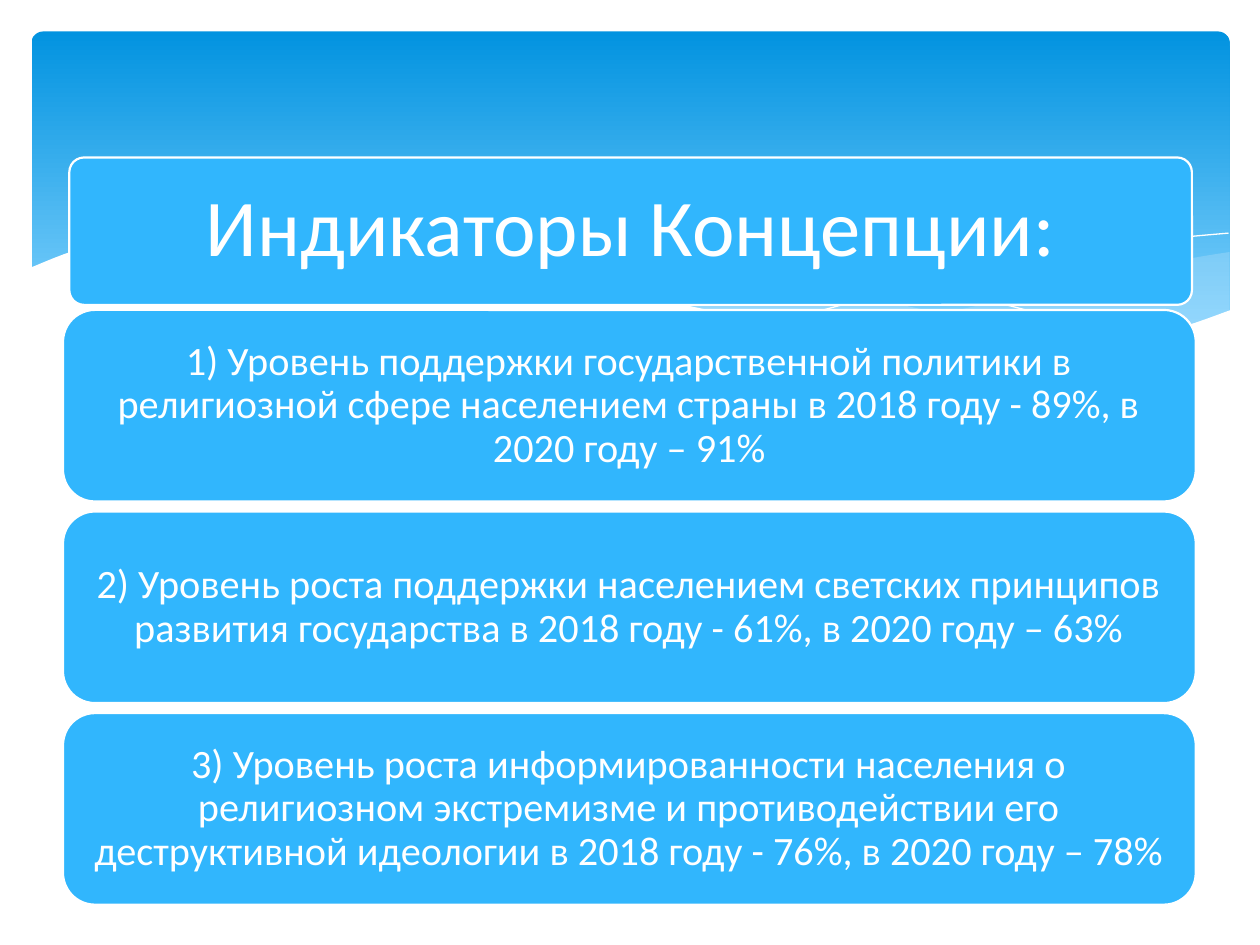
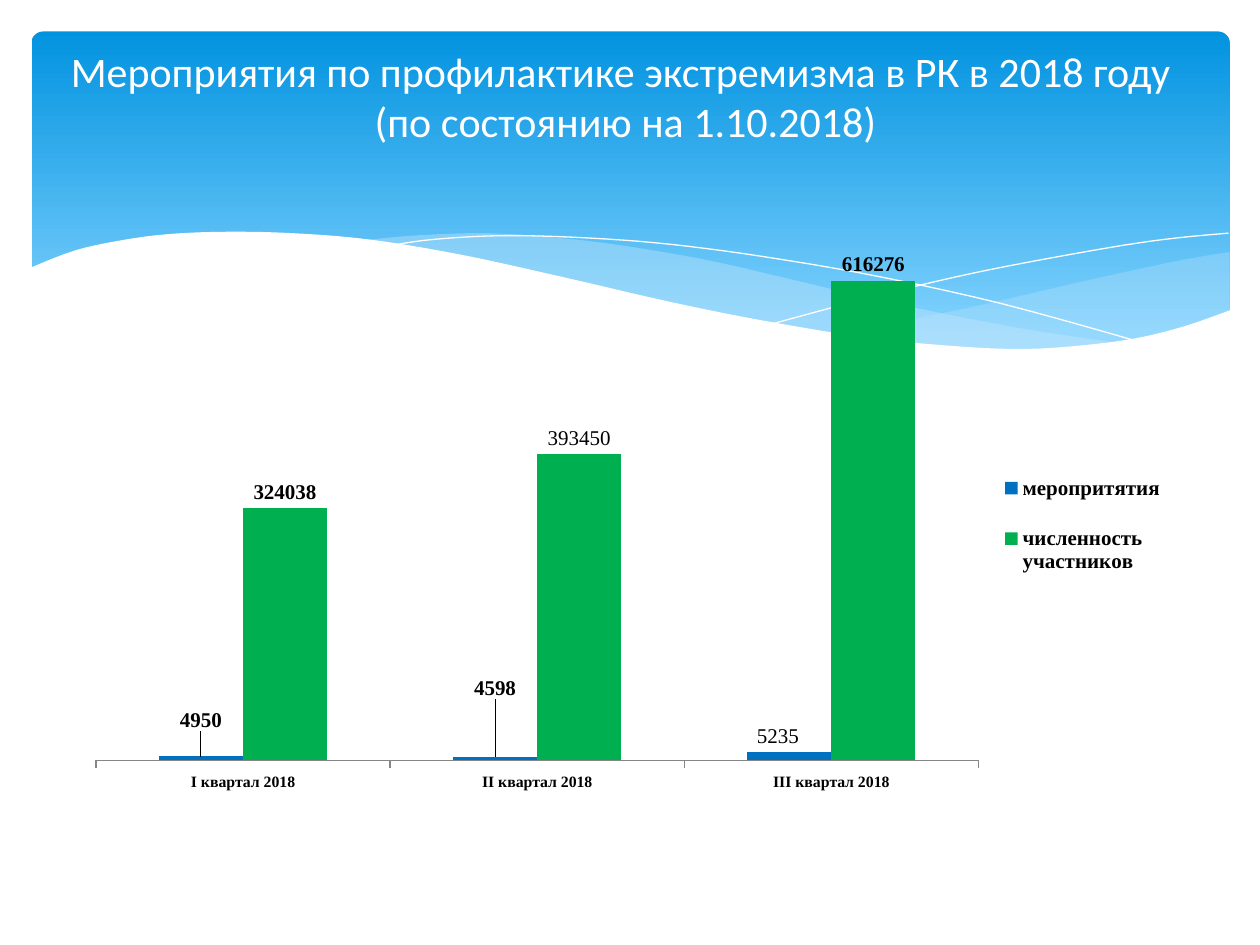
from lxml import etree
from pptx import Presentation
from pptx.chart.data import CategoryChartData
from pptx.dml.color import RGBColor
from pptx.enum.chart import XL_CHART_TYPE as ChartType, XL_LABEL_POSITION as LabelPosition
from pptx.enum.chart import XL_LEGEND_POSITION as LegendPosition, XL_TICK_MARK as TickMark
from pptx.enum.shapes import MSO_SHAPE as Shape
from pptx.enum.text import MSO_ANCHOR as Anchor, MSO_AUTO_SIZE as AutoSize, PP_ALIGN as Align
from pptx.oxml.ns import qn
from pptx.util import Inches, Pt

WHITE = RGBColor(0xFF, 0xFF, 0xFF)
BLACK = RGBColor(0, 0, 0)
GREY = RGBColor(0x86, 0x86, 0x86)
SKY_TOP = RGBColor(0x02, 0x93, 0xE0)
SKY_BOTTOM = RGBColor(0x83, 0xD3, 0xFE)
WAVE = RGBColor(0xC6, 0xE7, 0xFC)
PANEL = RGBColor(0x31, 0xB6, 0xFD)
BLUE = RGBColor(0x00, 0x70, 0xC0)
GREEN = RGBColor(0x00, 0xB0, 0x50)

BODY_FONT = "Calibri"
CHART_FONT = "Times New Roman"

# Each curve is a list of knots; an outline is a list of curves.
RIGHT_WAVE = [
    [(9.76, 2), (9.35, 2.07), (8.61, 2.23), (7.79, 2.42), (7.06, 2.57), (6.61, 2.65)],
    [(6.61, 2.65), (7.19, 2.72), (7.69, 2.77), (8.14, 2.78), (8.63, 2.75), (9.05, 2.69),
     (9.42, 2.59), (9.76, 2.47)],
]
MIDDLE_WAVE = [
    [(8.93, 2.73), (8.07, 2.6), (7.06, 2.4), (6.29, 2.22), (5.69, 2.08), (5.14, 1.98),
     (4.65, 1.91), (4.2, 1.87), (3.8, 1.85), (3.28, 1.87), (2.86, 1.91)],
    [(2.86, 1.91), (3.42, 1.99), (4.04, 2.11), (4.91, 2.32), (5.66, 2.48), (6.34, 2.61),
     (6.95, 2.7), (7.48, 2.76), (8.07, 2.78), (8.57, 2.77), (8.93, 2.73)],
]
FALLING_LINE = [[(3.09, 1.95), (3.44, 1.9), (4.01, 1.87), (4.69, 1.89), (5.33, 1.94),
                 (6.08, 2.04), (6.95, 2.19), (7.95, 2.41), (9.07, 2.72)]]
RISING_LINE = [[(6.13, 2.57), (6.95, 2.35), (7.76, 2.16), (8.66, 1.99), (9.24, 1.9),
                (9.75, 1.85)]]
WHITE_WAVE = [
    [(9.77, 2.46), (9.4, 2.59), (8.99, 2.69), (8.5, 2.75), (8.09, 2.77), (7.61, 2.75),
     (6.88, 2.68), (6.03, 2.54), (5.29, 2.39), (4.47, 2.2), (3.65, 2.02), (2.92, 1.9),
     (2.3, 1.85), (1.77, 1.84), (1.32, 1.86), (0.95, 1.91), (0.59, 1.99), (0.23, 2.13)],
    [(0.23, 3.29), (9.77, 3.29)],
]


def smooth(knots, steps=5):
    """Sample a Catmull-Rom spline through the knots."""
    if len(knots) < 3:
        return knots
    padded = [knots[0], *knots, knots[-1]]
    points = []
    for a, b, c, d in zip(padded, padded[1:], padded[2:], padded[3:]):
        for t in (step / steps for step in range(steps)):
            points.append(tuple(
                q + t * (r - p) / 2 + t**2 * (2 * p - 5 * q + 4 * r - s) / 2
                + t**3 * (3 * q - p - 3 * r + s) / 2
                for p, q, r, s in zip(a, b, c, d)))
    return points + [knots[-1]]


def set_font(font, size, name=CHART_FONT, color=BLACK, bold=False):
    font.size, font.name, font.bold = Pt(size), name, bold
    font.color.rgb = color


def place(parent, index, **values):
    """Give a chart part a manual layout, in fractions of the chart."""
    for old in parent.findall(qn("c:layout")):
        parent.remove(old)
    layout = etree.Element(qn("c:layout"))
    manual = etree.SubElement(layout, qn("c:manualLayout"))
    for name, value in values.items():
        etree.SubElement(manual, qn(f"c:{name}")).set("val", str(value))
    parent.insert(index, layout)


class Deck:
    def __init__(self):
        self.deck = Presentation()
        self.deck.slide_width, self.deck.slide_height = Inches(10), Inches(7.5)
        self.layout = self.deck.slide_layouts[5]
        for holder in list(self.layout.placeholders)[1:]:
            holder._element.getparent().remove(holder._element)
        self.new_page()
        self.backdrop()

    def new_page(self):
        self.page = self.deck.slides.add_slide(self.layout)

    def backdrop(self):
        """Draw the sky and waves once, then hand them to the layout."""
        sky = self.rounded(0.25, 0.25, 9.51, 2.7, corner=0.034)
        sky.line.fill.background()
        sky.fill.gradient()
        sky.fill.gradient_angle = 270
        for stop, color, position in zip(sky.fill.gradient_stops, (SKY_TOP, SKY_BOTTOM), (0, 0.9)):
            stop.color.rgb, stop.position = color, position
        parts = [
            sky,
            self.wave(RIGHT_WAVE, WAVE, 29),
            self.wave(MIDDLE_WAVE, WAVE, 40),
            self.wave(FALLING_LINE),
            self.wave(RISING_LINE),
            self.wave(WHITE_WAVE, WHITE),
        ]
        for index, part in enumerate(parts, start=2):
            self.layout.shapes._spTree.insert(index, part._element)

    def wave(self, curves, color=None, opacity=100):
        """Fill the outline with a colour, or without one draw a white hairline."""
        points = [(Inches(x), Inches(y)) for curve in curves for x, y in smooth(curve)]
        builder = self.page.shapes.build_freeform(*points[0])
        builder.add_line_segments(points[1:], close=color is not None)
        shape = builder.convert_to_shape()
        shape.shadow.inherit = False
        if color is None:
            shape.fill.background()
            shape.line.color.rgb, shape.line.width = WHITE, Pt(0)
            return shape
        shape.line.fill.background()
        shape.fill.solid()
        shape.fill.fore_color.rgb = color
        if opacity < 100:
            tint = shape._element.spPr.find(f"{qn('a:solidFill')}/{qn('a:srgbClr')}")
            etree.SubElement(tint, qn("a:alpha")).set("val", str(opacity * 1000))
        return shape

    def rounded(self, left, top, width, height, corner):
        box = self.page.shapes.add_shape(
            Shape.ROUNDED_RECTANGLE, Inches(left), Inches(top), Inches(width), Inches(height))
        box.adjustments[0] = corner
        box.shadow.inherit = False
        return box

    def panel(self, left, top, width, height, corner=0.1667):
        box = self.rounded(left, top, width, height, corner)
        box.fill.solid()
        box.fill.fore_color.rgb = PANEL
        box.line.color.rgb, box.line.width = WHITE, Pt(1.25)
        return box

    def set_text(self, box, text, size, spacing, inset=0.1):
        frame = box.text_frame
        frame.text = text
        frame.word_wrap, frame.auto_size = True, AutoSize.NONE
        frame.vertical_anchor = Anchor.MIDDLE
        frame.margin_left = frame.margin_right = Inches(inset)
        frame.margin_top = frame.margin_bottom = Inches(0.05)
        para = frame.paragraphs[0]
        para.alignment, para.line_spacing = Align.CENTER, spacing
        set_font(para.font, size, BODY_FONT, WHITE)

    def title(self, text, left, top, width, height, size, spacing=1.0, inset=0.1):
        """Fill the title placeholder and bring it to the front."""
        box = self.page.shapes.title
        box.left, box.top = Inches(left), Inches(top)
        box.width, box.height = Inches(width), Inches(height)
        self.set_text(box, text, size, spacing, inset)
        self.page.shapes._spTree.append(box._element)

    def column_chart(self, left, top, width, height, categories, series, colors):
        data = CategoryChartData()
        data.categories = categories
        for name, values in series.items():
            data.add_series(name, values)
        chart = self.page.shapes.add_chart(
            ChartType.COLUMN_CLUSTERED, Inches(left), Inches(top), Inches(width),
            Inches(height), data).chart
        set_font(chart.font, 10, BODY_FONT)
        chart.has_title = False

        chart.has_legend = True
        chart.legend.position = LegendPosition.RIGHT
        chart.legend.include_in_layout = False
        set_font(chart.legend.font, 12, bold=True)
        place(chart.legend._element, 1, xMode="edge", yMode="edge", x=0.81, y=0.4, w=0.18, h=0.23)
        plot_area = chart._chartSpace.chart.plotArea
        place(plot_area, 0, layoutTarget="inner", xMode="edge", yMode="edge",
              x=0.028, y=0.046, w=0.78, h=0.827)

        values_axis, names_axis = chart.value_axis, chart.category_axis
        values_axis.minimum_scale, values_axis.maximum_scale = 0, 700000
        values_axis.has_major_gridlines = False
        values_axis.visible = False
        names_axis.major_tick_mark = TickMark.OUTSIDE
        names_axis.format.line.color.rgb = GREY
        set_font(names_axis.tick_labels.font, 9, bold=True)

        plot = chart.plots[0]
        plot.gap_width, plot.overlap, plot.vary_by_categories = 150, 0, False
        for bars, color in zip(plot.series, colors):
            bars.format.fill.solid()
            bars.format.fill.fore_color.rgb = color
            labels = bars.data_labels
            labels.show_value = True
            labels.position = LabelPosition.OUTSIDE_END
            set_font(labels.font, 12, bold=True)
        return plot.series

    def point_label(self, bars, index, bold=True, text=None, shift=None):
        label = bars.points[index].data_label
        if text:
            label.text_frame.text = text
            set_font(label.text_frame.paragraphs[0].runs[0].font, 12, bold=bold)
        else:
            set_font(label.font, 12, bold=bold)
        label.position = LabelPosition.OUTSIDE_END
        if shift:
            element = bars._element.xpath(f".//c:dLbl[c:idx/@val='{index}']")[0]
            place(element, 1, x=shift[0], y=shift[1])


def indicators(deck):
    texts = [
        "1) Уровень поддержки государственной политики в религиозной сфере населением страны "
        "в 2018 году - 89%, в 2020 году – 91%",
        "2) Уровень роста поддержки населением светских принципов развития государства "
        "в 2018 году - 61%, в 2020 году – 63%",
        "3) Уровень роста информированности населения о религиозном экстремизме и "
        "противодействии его деструктивной идеологии в 2018 году - 76%, в 2020 году – 78%",
    ]
    for row, text in enumerate(texts):
        deck.set_text(deck.panel(0.5, 2.46 + 1.6 * row, 8.99, 1.52), text, 23, 0.9)
    deck.panel(0.55, 1.25, 8.91, 1.17, corner=0.1)
    deck.title("Индикаторы Концепции:", 0.58, 1.28, 8.84, 1.1, 46, spacing=0.9, inset=0.19)


def prevention_events(deck):
    deck.new_page()
    deck.title("Мероприятия по профилактике экстремизма в РК в 2018 году \v"
               "(по состоянию на 1.10.2018)", 0.28, 0.37, 9.37, 0.78, 24)
    events, participants = deck.column_chart(
        0.51, 1.47, 8.98, 5.23,
        ["I квартал 2018", "II квартал 2018", "III квартал 2018"],
        {"меропритятия": (4950, 4598, 10662),
         "численность участников": (324038, 393450, 616276)},
        (BLUE, GREEN))
    deck.point_label(events, 0, shift=(0, -0.03))
    deck.point_label(events, 1, shift=(0, -0.08))
    deck.point_label(events, 2, bold=False, text="5235", shift=(-0.01, 0))
    deck.point_label(participants, 1, bold=False)


def main():
    slides = Deck()
    indicators(slides)
    prevention_events(slides)
    slides.deck.save("out.pptx")


if __name__ == "__main__":
    main()
